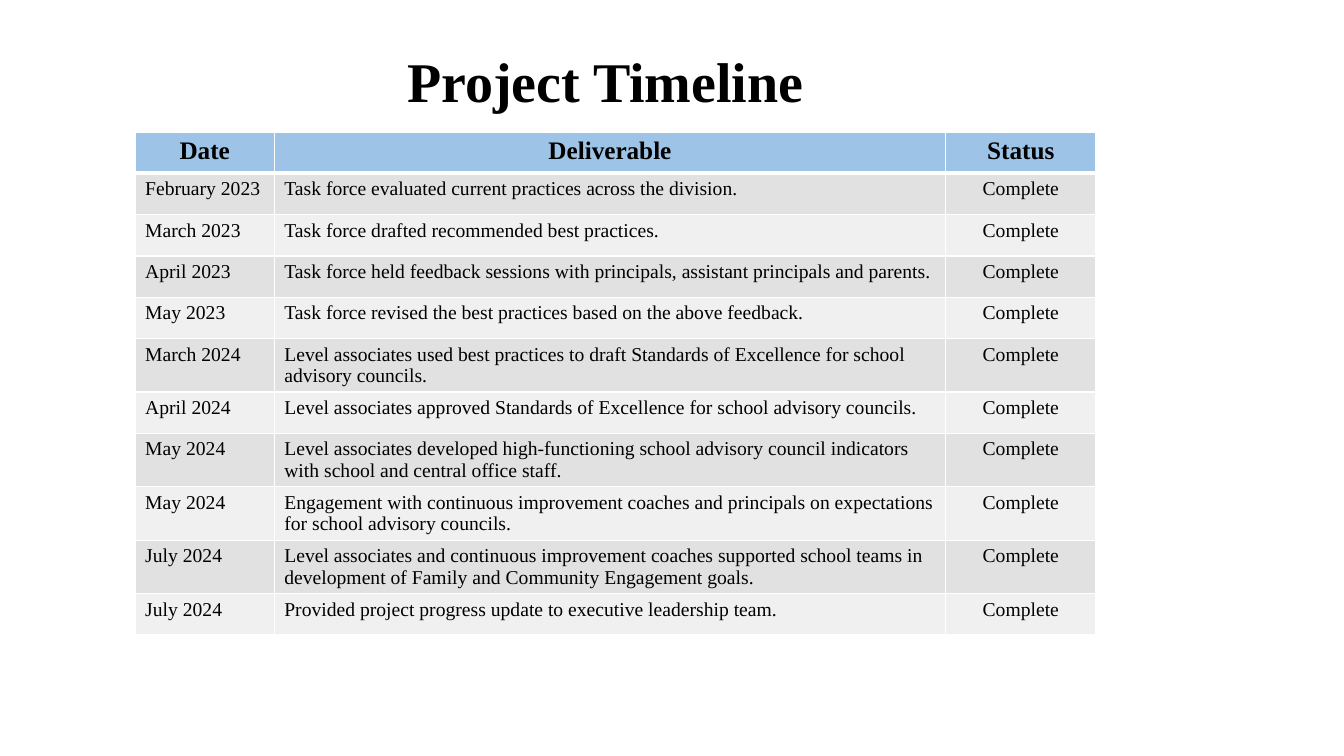
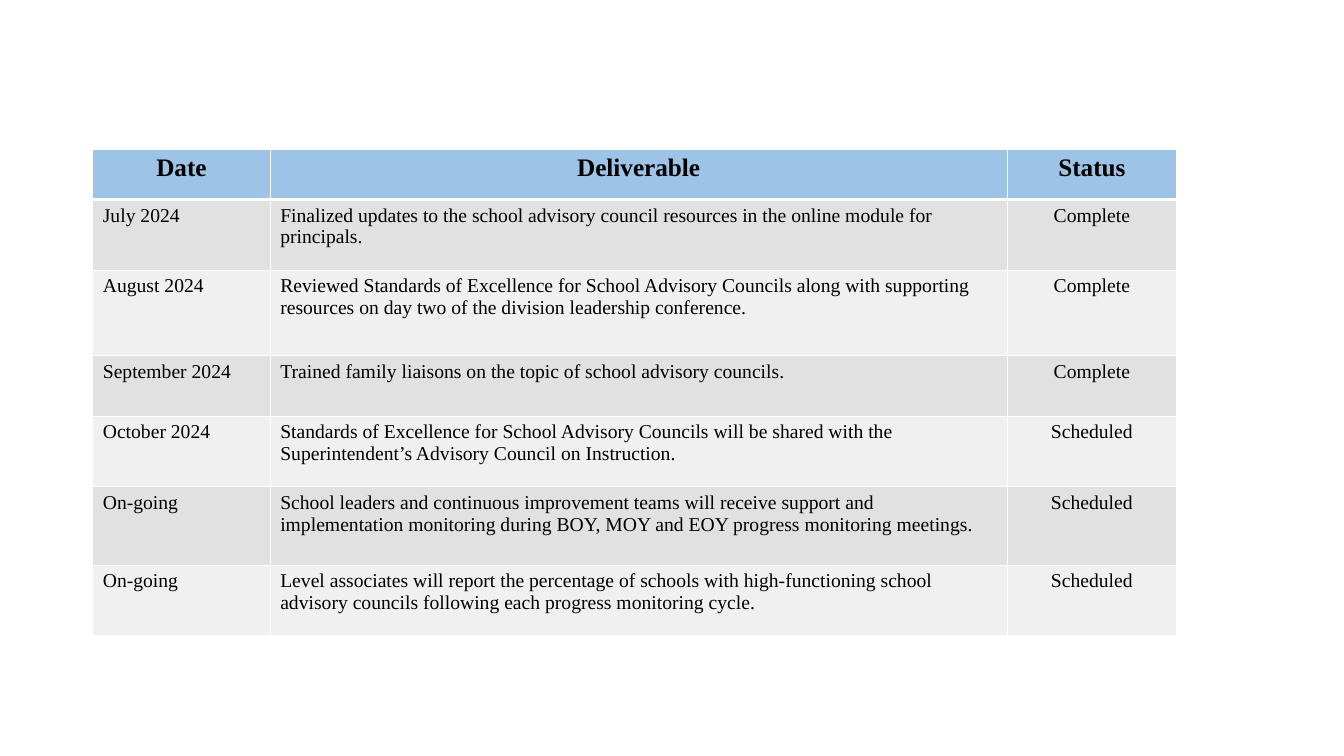
from dataclasses import dataclass

from lxml.etree import SubElement as add_node
from pptx import Presentation
from pptx.dml.color import RGBColor as Color
from pptx.enum.text import MSO_ANCHOR as Anchor
from pptx.enum.text import MSO_AUTO_SIZE as Fit
from pptx.enum.text import PP_ALIGN as Align
from pptx.oxml.ns import qn
from pptx.slide import Slide
from pptx.table import _Cell as Cell
from pptx.util import Inches, Pt

# Shared look
COLORS = {
    "head": "9DC3E6",
    "odd": "E1E1E1",
    "even": "F0F0F0",
    "line": "FFFFFF",
    "text": "000000",
}
FACE = "Times New Roman"
FONTS = {
    "title": {"name": FACE, "size": Pt(40), "bold": True},
    "head": {"name": FACE, "size": Pt(18), "bold": True},
    "body": {"name": FACE, "size": Pt(14), "bold": False},
}
HEADS = ("Date", "Deliverable", "Status")
THIN, THICK = 1, 3
TITLE_ONLY, BLANK = 5, 6


@dataclass
class Task:
    date: str
    work: str
    status: str = "Complete"


@dataclass
class Page:
    left: float
    top: float
    cols: list[float]
    rows: list[float]
    tasks: list[Task]
    title: str = ""


PAST = [
    Task("February 2023", "Task force evaluated current practices across the division."),
    Task("March 2023", "Task force drafted recommended best practices."),
    Task("April 2023", "Task force held feedback sessions with principals, "
         "assistant principals and parents."),
    Task("May 2023", "Task force revised the best practices based on the above feedback."),
    Task("March 2024", "Level associates used best practices to draft Standards of "
         "Excellence for school advisory councils."),
    Task("April 2024", "Level associates approved Standards of Excellence for "
         "school advisory councils."),
    Task("May 2024", "Level associates developed high-functioning school advisory "
         "council indicators with school and central office staff."),
    Task("May 2024", "Engagement with continuous improvement coaches and principals "
         "on expectations for school advisory councils."),
    Task("July 2024", "Level associates and continuous improvement coaches supported "
         "school teams in development of Family and Community Engagement goals."),
    Task("July 2024", "Provided project progress update to executive leadership team."),
]
NEXT = [
    Task("July 2024", "Finalized updates to the school advisory council resources "
         "in the online module for principals."),
    Task("August 2024", "Reviewed Standards of Excellence for School Advisory Councils "
         "along with supporting resources on day two of the division leadership conference."),
    Task("September 2024", "Trained family liaisons on the topic of school advisory councils."),
    Task("October 2024", "Standards of Excellence for School Advisory Councils will be "
         "shared with the Superintendent’s Advisory Council on Instruction.", "Scheduled"),
    Task("On-going", "School leaders and continuous improvement teams will receive support "
         "and implementation monitoring during BOY, MOY and EOY progress monitoring "
         "meetings.", "Scheduled"),
    Task("On-going", "Level associates will report the percentage of schools with "
         "high-functioning school advisory councils following each progress monitoring "
         "cycle.", "Scheduled"),
]
PAGES = [
    Page(1.34, 1.31, [1.38, 6.66, 1.49], [0.41] * (len(PAST) + 1), PAST, "Project Timeline"),
    Page(0.92, 1.48, [1.76, 7.31, 1.68], [0.5, 0.7, 0.85, 0.6, 0.7, 0.78, 0.7], NEXT),
]


def write(frame, text: str, style: str, align: Align) -> None:
    """Fill a text frame with one styled paragraph."""
    para = frame.paragraphs[0]
    para.alignment = align
    run = para.add_run()
    run.text = text
    for key, value in FONTS[style].items():
        setattr(run.font, key, value)
    run.font.color.rgb = Color.from_string(COLORS["text"])


def add_title(slide: Slide, text: str) -> None:
    title = slide.shapes.title
    place = {"left": 1.85, "top": 0.5, "width": 8.31, "height": 0.68}
    for key, value in place.items():
        setattr(title, key, Inches(value))
    frame = title.text_frame
    frame.auto_size = Fit.NONE
    frame.vertical_anchor = Anchor.MIDDLE
    write(frame, text, "title", Align.CENTER)
    frame.paragraphs[0].line_spacing = 0.9


def edge(cell: Cell, row: int) -> None:
    """Draw cell borders, with a thick rule below the header."""
    widths = {
        "L": THIN,
        "R": THIN,
        "T": THICK if row == 1 else THIN,
        "B": THICK if row == 0 else THIN,
    }
    props = cell._tc.get_or_add_tcPr()
    for side, width in widths.items():
        line = add_node(props, qn(f"a:ln{side}"), w=str(Pt(width)))
        fill = add_node(line, qn("a:solidFill"))
        add_node(fill, qn("a:srgbClr"), val=COLORS["line"])


def add_grid(slide: Slide, page: Page) -> None:
    lines = [HEADS] + [(task.date, task.work, task.status) for task in page.tasks]
    table = slide.shapes.add_table(
        len(lines), len(HEADS), Inches(page.left), Inches(page.top),
        Inches(sum(page.cols)), Inches(sum(page.rows)),
    ).table
    table.horz_banding = False
    for col, width in zip(table.columns, page.cols):
        col.width = Inches(width)
    for row, height in zip(table.rows, page.rows):
        row.height = Inches(height)

    for r, line in enumerate(lines):
        shade = "head" if r == 0 else "odd" if r % 2 else "even"
        style = "head" if r == 0 else "body"
        for c, text in enumerate(line):
            cell = table.cell(r, c)
            edge(cell, r)
            cell.fill.solid()
            cell.fill.fore_color.rgb = Color.from_string(COLORS[shade])
            center = r == 0 or HEADS[c] == "Status"
            write(cell.text_frame, text, style, Align.CENTER if center else Align.LEFT)


def main() -> None:
    deck = Presentation()
    deck.slide_width, deck.slide_height = Inches(13.33), Inches(7.5)
    for page in PAGES:
        layout = deck.slide_layouts[TITLE_ONLY if page.title else BLANK]
        slide = deck.slides.add_slide(layout)
        if page.title:
            add_title(slide, page.title)
        add_grid(slide, page)
    deck.save("out.pptx")


if __name__ == "__main__":
    main()
